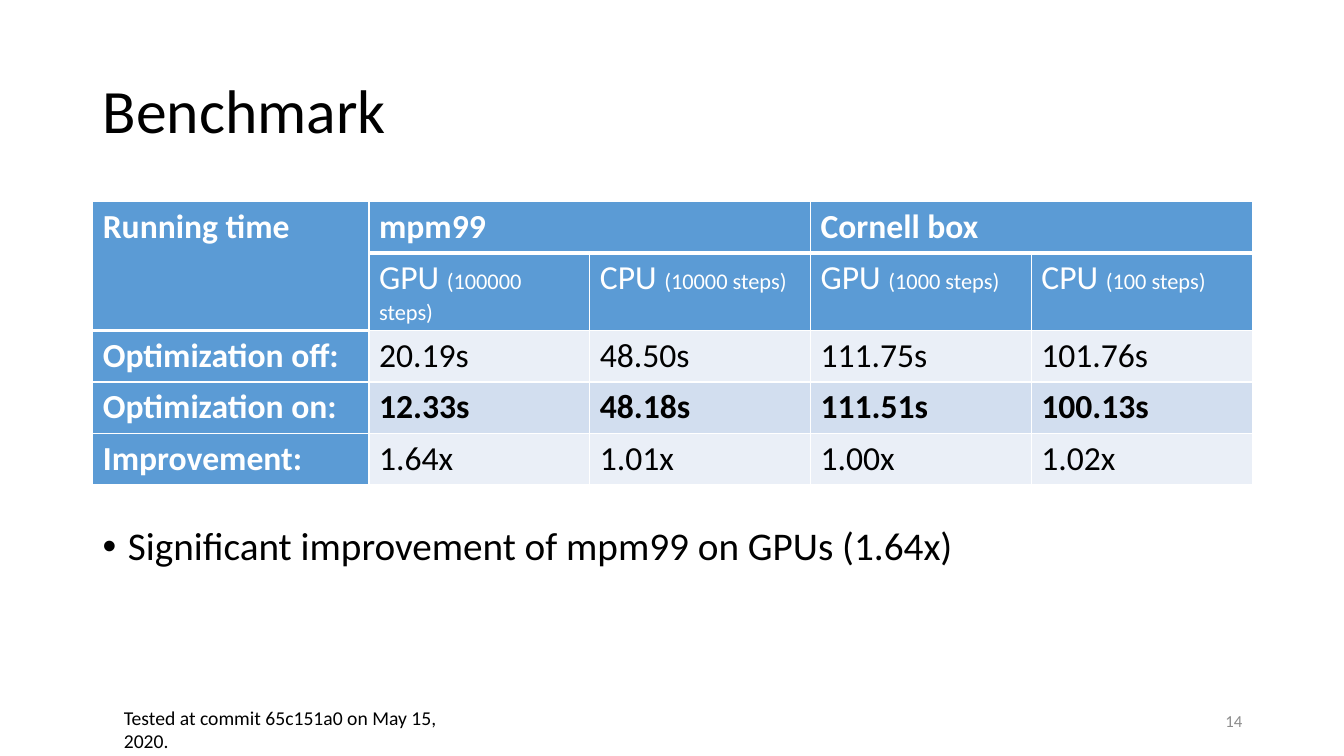
from dataclasses import dataclass

from lxml import etree
from pptx import Presentation, util as u
from pptx.dml.color import RGBColor
from pptx.enum import text
from pptx.oxml.ns import qn


@dataclass(frozen=True)
class Theme:
    font: str = "Calibri"
    ink: str = "000000"
    paper: str = "FFFFFF"
    muted: str = "8C8C8C"
    header: str = "5B9BD5"
    bands: tuple = ("EAEFF7", "D2DEEF")
    title: int = 44
    body: int = 28
    cell: int = 24
    steps: int = 16
    footnote: int = 14
    number: int = 12


THEME = Theme()
WIDTH, HEIGHT = 13.33, 7.5
LEFT, CONTENT = 0.92, 11.5

COLUMNS = [2.74] + [2.19] * 4
ROWS = [0.51, 0.77] + [0.51] * 3
GROUPS = ["mpm99", "Cornell box"]
DEVICES = [
    ("GPU ", "(100000 steps)"),
    ("CPU ", "(10000 steps)"),
    ("GPU ", "(1000 steps)"),
    ("CPU ", "(100 steps)"),
]
RESULTS = [
    ["Optimization off:", "20.19s", "48.50s", "111.75s", "101.76s"],
    ["Optimization on:", "12.33s", "48.18s", "111.51s", "100.13s"],
    ["Improvement:", "1.64x", "1.01x", "1.00x", "1.02x"],
]


def apply(target, formats):
    for name, value in formats.items():
        setattr(target, name, value)


def add_span(para, words, size, color, bold=False):
    span = para.add_run()
    span.text = words
    apply(span.font, {"name": THEME.font, "size": u.Pt(size), "bold": bold})
    span.font.color.rgb = RGBColor.from_string(color)


def add_text(page, box, words, size, color=THEME.ink, frame=None, para=None):
    shape = page.shapes.add_textbox(*map(u.Inches, box))
    apply(shape.text_frame, {"word_wrap": True, **(frame or {})})
    first = shape.text_frame.paragraphs[0]
    apply(first, para or {})
    add_span(first, words, size, color)
    return first


def add_bullet(page, box, words):
    para = add_text(page, box, words, THEME.body,
                    para={"line_spacing": 0.9, "space_before": u.Pt(10)})
    props = para._p.get_or_add_pPr()
    indent = u.Inches(0.25)
    props.set("marL", str(indent))
    props.set("indent", str(-indent))
    etree.SubElement(props, qn("a:buFont"), typeface="Arial")
    etree.SubElement(props, qn("a:buChar"), char="•")


def style_cell(cell, fill, bottom):
    props = cell._tc.get_or_add_tcPr()
    for side, width in (("L", 1), ("R", 1), ("T", 1), ("B", bottom)):
        line = etree.SubElement(props, qn(f"a:ln{side}"), w=str(u.Pt(width)))
        paint = etree.SubElement(line, qn("a:solidFill"))
        etree.SubElement(paint, qn("a:srgbClr"), val=THEME.paper)
    cell.fill.solid()
    cell.fill.fore_color.rgb = RGBColor.from_string(fill)


def add_benchmark(page, box):
    table = page.shapes.add_table(
        len(ROWS), len(COLUMNS), *map(u.Inches, box)).table
    for column, width in zip(table.columns, COLUMNS):
        column.width = u.Inches(width)
    for row, height in zip(table.rows, ROWS):
        row.height = u.Inches(height)

    for r in range(len(ROWS)):
        for c in range(len(COLUMNS)):
            heading = r < 2 or c == 0
            fill = THEME.header if heading else THEME.bands[r % 2]
            thick = r == 0 or (r, c) == (1, 0)
            style_cell(table.cell(r, c), fill, 3 if thick else 1)

    def write(r, c, words, color=THEME.paper, bold=True, size=THEME.cell):
        para = table.cell(r, c).text_frame.paragraphs[0]
        add_span(para, words, size, color, bold)

    table.cell(0, 0).merge(table.cell(1, 0))
    write(0, 0, "Running time")
    for index, group in enumerate(GROUPS):
        start = 1 + 2 * index
        table.cell(0, start).merge(table.cell(0, start + 1))
        write(0, start, group)
    for c, (device, steps) in enumerate(DEVICES, 1):
        write(1, c, device, bold=False)
        write(1, c, steps, bold=False, size=THEME.steps)
    for r, (label, *values) in enumerate(RESULTS, 2):
        write(r, 0, label)
        for c, value in enumerate(values, 1):
            write(r, c, value, THEME.ink, bold=label == "Optimization on:")


def add_footer(page, top):
    add_text(page, (1.13, top, 3.75, 0.34),
             "Tested at commit 65c151a0 on May 15, 2020.", THEME.footnote,
             frame={"auto_size": text.MSO_AUTO_SIZE.SHAPE_TO_FIT_TEXT})
    width = 3
    add_text(page, (LEFT + CONTENT - width, top, width, 0.4), "14",
             THEME.number, THEME.muted,
             frame={"vertical_anchor": text.MSO_ANCHOR.MIDDLE},
             para={"alignment": text.PP_ALIGN.RIGHT})


def build_benchmark_slide(deck):
    page = deck.slides.add_slide(deck.slide_layouts[6])
    add_text(page, (LEFT, 0.4, CONTENT, 1.45), "Benchmark", THEME.title,
             frame={"vertical_anchor": text.MSO_ANCHOR.MIDDLE},
             para={"line_spacing": 0.9})
    add_benchmark(page, (LEFT, 2, CONTENT, sum(ROWS)))
    add_bullet(page, (LEFT, 5.18, CONTENT, 1.57),
               "Significant improvement of mpm99 on GPUs (1.64x)")
    add_footer(page, 6.95)


def main():
    deck = Presentation()
    apply(deck, {"slide_width": u.Inches(WIDTH),
                 "slide_height": u.Inches(HEIGHT)})
    build_benchmark_slide(deck)
    deck.save("out.pptx")


if __name__ == "__main__":
    main()
